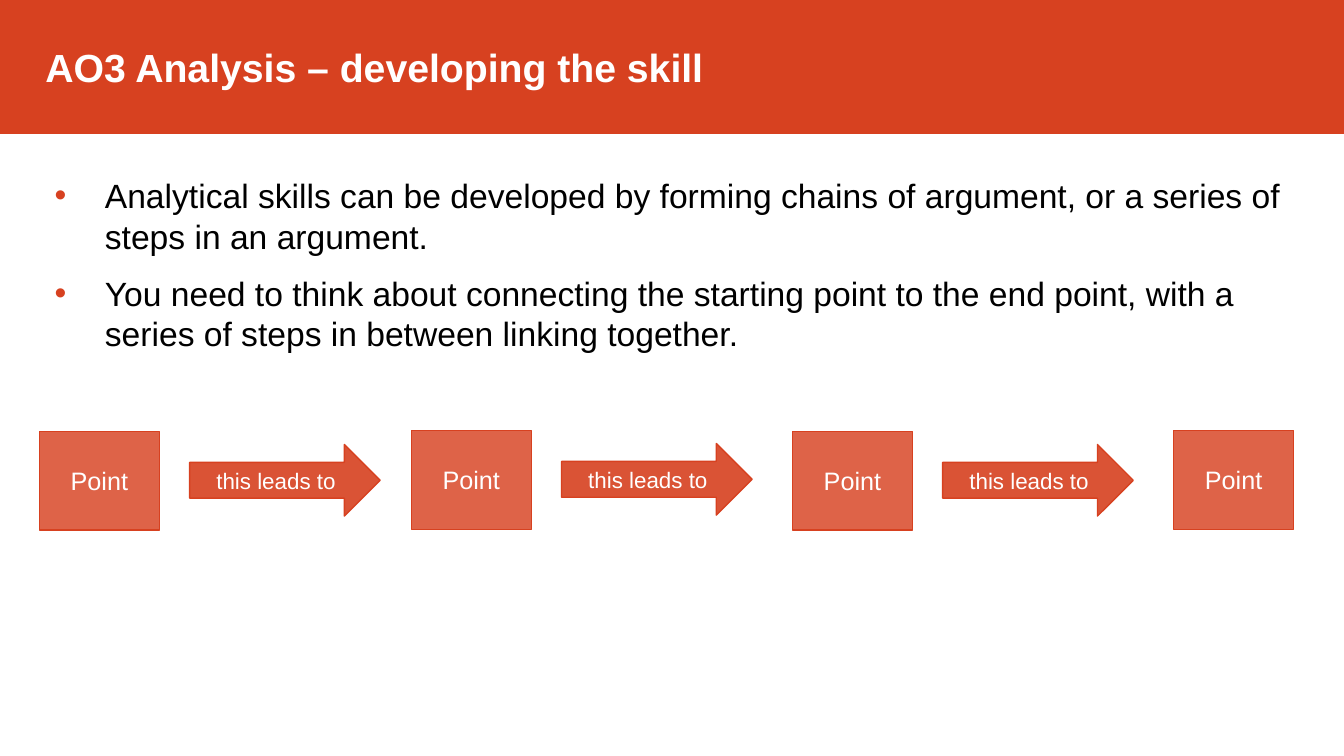
"""Builds the slide on chains of argument: a banner, two bullets and a row of linked steps."""
from lxml import etree
from pptx import Presentation
from pptx.dml import color
from pptx.enum import shapes, text
from pptx.oxml import ns
from pptx.util import Emu, Inches, Pt

theme = {
    "font": "Arial",
    "red": color.RGBColor.from_string("D74120"),
    "white": color.RGBColor.from_string("FFFFFF"),
    "black": color.RGBColor.from_string("000000"),
    "title": 28, "body": 24, "box": 18, "arrow": 16,
}

deck = Presentation()
deck.slide_width, deck.slide_height = Inches(13.33), Inches(7.5)
col, row = deck.slide_width / 100, deck.slide_height / 100
slide = deck.slides.add_slide(deck.slide_layouts[5])


def cell(x, y, w, h):
    """Turns columns and rows of a 100 by 100 grid into lengths."""
    return [Emu(round(n * unit)) for n, unit in zip((x, y, w, h), (col, row, col, row))]


def write(shape, lines, size, tint, align, bold=False, **frame):
    """Sets the text of a shape and its format."""
    pad = Inches(0.05)
    look = {"word_wrap": True, "auto_size": text.MSO_AUTO_SIZE.NONE,
            "vertical_anchor": text.MSO_ANCHOR.MIDDLE,
            "margin_left": pad, "margin_right": pad, "margin_top": 0, "margin_bottom": 0}
    for key, val in (look | frame).items():
        setattr(shape.text_frame, key, val)
    shape.text_frame.text = "\n".join(lines)
    for para in shape.text_frame.paragraphs:
        para.alignment = align
        for key, val in {"name": theme["font"], "size": Pt(theme[size]), "bold": bold}.items():
            setattr(para.runs[0].font, key, val)
        para.runs[0].font.color.rgb = theme[tint]


left, mid = text.PP_ALIGN.LEFT, text.PP_ALIGN.CENTER

title = slide.shapes.title
title.left, title.top, title.width, title.height = cell(0, 0, 100, 17.6)
title.fill.solid()
title.fill.fore_color.rgb = title.line.color.rgb = theme["red"]
title.line.width = Pt(1)
write(title, ["AO3 Analysis – developing the skill"], "title", "white", left,
      bold=True, margin_left=Inches(0.45))

body = slide.shapes.add_textbox(*cell(3.68, 22.53, 94.52, 31.6))
write(body, [
    "Analytical skills can be developed by forming chains of argument, "
    "or a series of steps in an argument.",
    "You need to think about connecting the starting point to the end point, "
    "with a series of steps in between linking together.",
], "body", "black", left, vertical_anchor=text.MSO_ANCHOR.TOP,
    margin_top=Inches(0.05), margin_bottom=Inches(0.05))
for para in body.text_frame.paragraphs:
    para.space_before = Pt(12)
    props = para._p.get_or_add_pPr()
    props.set("marL", str(Inches(0.5)))
    props.set("indent", str(-Inches(0.5)))
    tint = etree.SubElement(props, ns.qn("a:buClr"))
    etree.SubElement(tint, ns.qn("a:srgbClr"), val=str(theme["red"]))
    etree.SubElement(props, ns.qn("a:buFont"), typeface=theme["font"])
    etree.SubElement(props, ns.qn("a:buChar"), char="•")

kind = shapes.MSO_SHAPE
starts = [2.93, 30.6, 58.96, 87.32]
for i, x in enumerate(starts):
    lift = 0.13 * (i % 2)
    parts = [(kind.RECTANGLE, (x, 57.07 - lift, 8.93, 13.07), "Point", "box", 82)]
    if i < len(starts) - 1:
        parts.append((kind.RIGHT_ARROW, (x + 11.18, 58.8 - lift, 14.18, 9.47),
                      "this leads to", "arrow", 90))
    for form, spot, words, size, alpha in parts:
        step = slide.shapes.add_shape(form, *cell(*spot))
        step.shadow.inherit = False
        step.fill.solid()
        step.fill.fore_color.rgb = step.line.color.rgb = theme["red"]
        step.line.width = Pt(1)
        shade = step._element.spPr.find(ns.qn("a:solidFill"))[0]
        etree.SubElement(shade, ns.qn("a:alpha"), val=str(alpha * 1000))
        write(step, [words], size, "white", mid)

deck.save("out.pptx")
